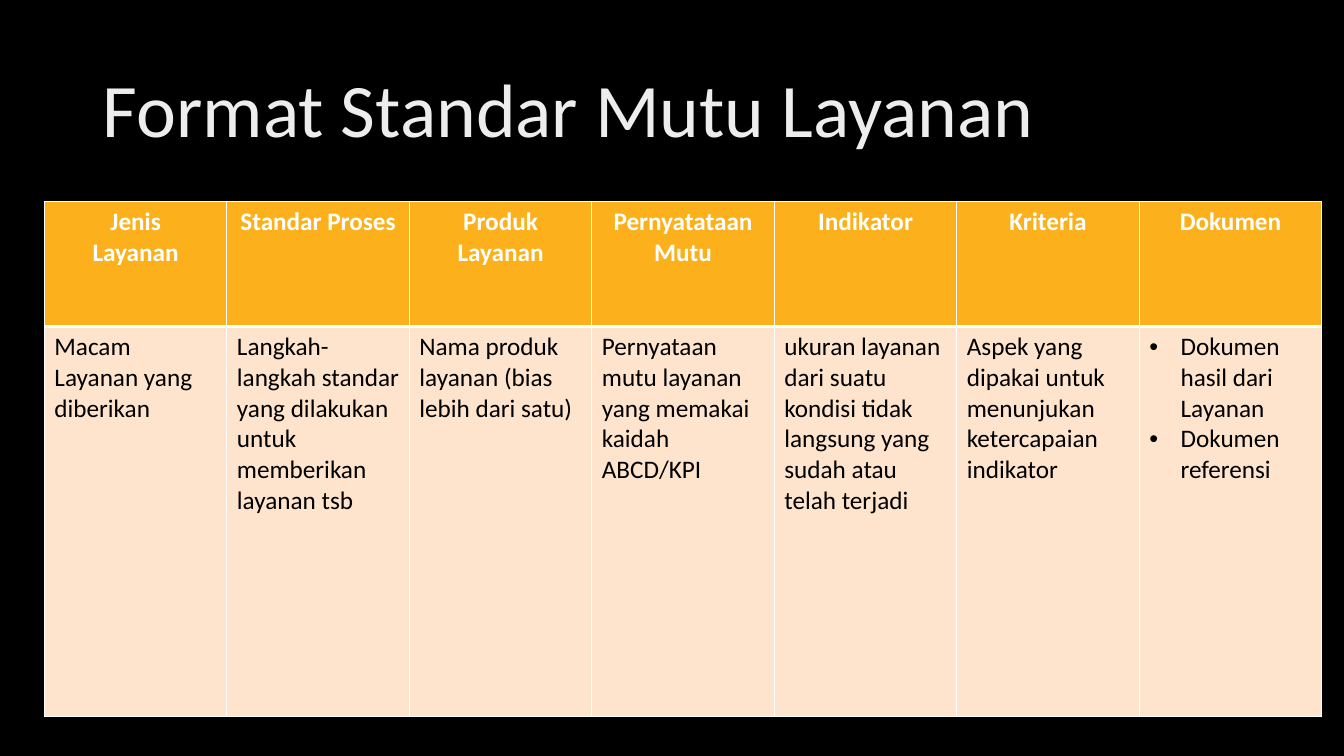
from lxml.etree import SubElement
from pptx import Presentation
from pptx.dml.color import RGBColor
from pptx.enum.text import MSO_ANCHOR, PP_ALIGN
from pptx.oxml.ns import qn
from pptx.util import Pt

EMU_PER_PX = 9144
BLACK = RGBColor(0x00, 0x00, 0x00)
WHITE = RGBColor(0xFF, 0xFF, 0xFF)
TITLE_GREY = RGBColor(0xED, 0xED, 0xED)
HEADER_ORANGE = RGBColor(0xFC, 0xB1, 0x1C)
BODY_PEACH = RGBColor(0xFE, 0xE4, 0xCD)

COLUMN_WIDTH = 181
ROW_HEIGHTS = (124, 387)
BULLET_INDENT = 31

TITLE_FONT = {"name": "Calibri", "size": Pt(54), "bold": False}
HEADER_FONT = {"name": "Calibri", "size": Pt(18), "bold": True}
BODY_FONT = {"name": "Calibri", "size": Pt(18), "bold": False}

COLUMNS = [
    (["Jenis", "Layanan"], ["Macam", "Layanan yang", "diberikan"]),
    (["Standar Proses"],
     ["Langkah-langkah standar yang dilakukan untuk memberikan layanan tsb"]),
    (["Produk", "Layanan"], ["Nama produk layanan (bias lebih dari satu)"]),
    (["Pernyatataan", "Mutu"],
     ["Pernyataan mutu layanan yang memakai kaidah ABCD/KPI"]),
    (["Indikator"],
     ["ukuran layanan dari suatu kondisi tidak langsung yang sudah atau telah terjadi"]),
    (["Kriteria"],
     ["Aspek yang dipakai untuk menunjukan ketercapaian indikator"]),
    (["Dokumen"], ["Dokumen hasil dari Layanan", "Dokumen referensi"]),
]
BULLETED_COLUMN = len(COLUMNS) - 1


def px(length):
    return length * EMU_PER_PX


def format_font(font, values, color):
    for name, value in values.items():
        setattr(font, name, value)
    font.color.rgb = color


def add_bullet(paragraph):
    properties = paragraph._p.get_or_add_pPr()
    properties.set("marL", str(px(BULLET_INDENT)))
    properties.set("indent", str(-px(BULLET_INDENT)))
    SubElement(properties, qn("a:buFont"), typeface="Arial")
    SubElement(properties, qn("a:buChar"), char="•")


def set_borders(cell, widths):
    properties = cell._tc.get_or_add_tcPr()
    for index, (side, width) in enumerate(widths.items()):
        line = SubElement(properties, qn(f"a:ln{side}"), w=str(Pt(width)))
        fill = SubElement(line, qn("a:solidFill"))
        SubElement(fill, qn("a:srgbClr"), val=str(WHITE))
        properties.insert(index, line)


def fill_cell(cell, lines, fill_color, font_values, font_color, alignment, bulleted=False):
    cell.fill.solid()
    cell.fill.fore_color.rgb = fill_color
    text_frame = cell.text_frame
    text_frame.text = "\n".join(lines)
    for paragraph in text_frame.paragraphs:
        paragraph.alignment = alignment
        if bulleted:
            add_bullet(paragraph)
        for run in paragraph.runs:
            format_font(run.font, font_values, font_color)


def add_title(slide, text):
    title = slide.shapes.title
    box = {"left": 92, "top": 40, "width": 1150, "height": 145}
    for name, value in box.items():
        setattr(title, name, px(value))
    title.text_frame.text = text
    title.text_frame.vertical_anchor = MSO_ANCHOR.MIDDLE
    paragraph = title.text_frame.paragraphs[0]
    paragraph.alignment = PP_ALIGN.LEFT
    paragraph.line_spacing = 0.9
    format_font(paragraph.runs[0].font, TITLE_FONT, TITLE_GREY)


def add_standard_table(slide):
    table = slide.shapes.add_table(
        len(ROW_HEIGHTS), len(COLUMNS), px(44), px(200),
        px(COLUMN_WIDTH * len(COLUMNS)), px(sum(ROW_HEIGHTS))).table
    for row, height in zip(table.rows, ROW_HEIGHTS):
        row.height = px(height)
    for index, (heading, description) in enumerate(COLUMNS):
        table.columns[index].width = px(COLUMN_WIDTH)
        header, body = table.cell(0, index), table.cell(1, index)
        fill_cell(header, heading, HEADER_ORANGE, HEADER_FONT, WHITE, PP_ALIGN.CENTER)
        fill_cell(body, description, BODY_PEACH, BODY_FONT, BLACK, PP_ALIGN.LEFT,
                  bulleted=index == BULLETED_COLUMN)
        set_borders(header, {"L": 1, "R": 1, "T": 1, "B": 3})
        set_borders(body, {"L": 1, "R": 1, "T": 3, "B": 1})


def main():
    presentation = Presentation()
    presentation.slide_width = px(1333)
    presentation.slide_height = px(750)
    slide = presentation.slides.add_slide(presentation.slide_layouts[5])
    slide.background.fill.solid()
    slide.background.fill.fore_color.rgb = BLACK
    add_title(slide, "Format Standar Mutu Layanan")
    add_standard_table(slide)
    presentation.save("out.pptx")


if __name__ == "__main__":
    main()
